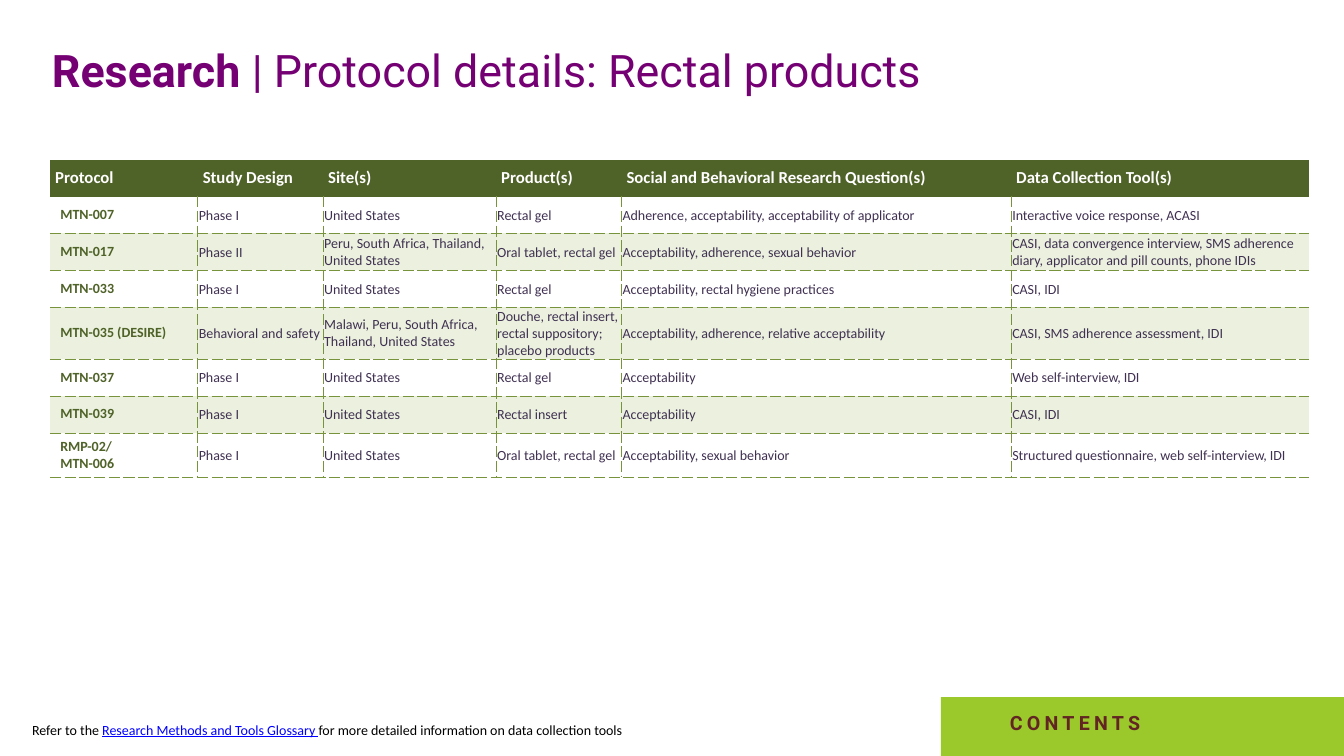
"""Build the slide listing protocol details for rectal products."""
from dataclasses import dataclass

from lxml import etree
from pptx import Presentation
from pptx.dml.color import RGBColor
from pptx.enum.shapes import MSO_SHAPE
from pptx.enum.text import MSO_ANCHOR
from pptx.oxml.ns import qn
from pptx.util import Cm, Pt

RECT = MSO_SHAPE.RECTANGLE
MIDDLE = MSO_ANCHOR.MIDDLE


@dataclass(frozen=True)
class Theme:
    heading: str = "Roboto"
    body: str = "Calibri"
    purple: str = "740074"
    dark_green: str = "4F6228"
    line_green: str = "77933C"
    pale_green: str = "EBF1DE"
    lime: str = "9BC82A"
    violet: str = "403152"
    maroon: str = "632523"
    blue: str = "0000FF"
    white: str = "FFFFFF"
    black: str = "000000"
    title_size: int = 32
    button_size: int = 14
    header_size: int = 12
    body_size: int = 10
    border_width: float = 0.25


theme = Theme()


def add_run(p, text, font, size, color, bold=False):
    r = p.add_run()
    r.text = text
    r.font.name = font
    r.font.size = Pt(size)
    r.font.bold = bold
    r.font.color.rgb = RGBColor.from_string(color)
    return r


def add_border(cell, side, color, dash):
    ln = etree.SubElement(cell._tc.get_or_add_tcPr(), qn(f"a:ln{side}"),
                          w=str(Pt(theme.border_width)))
    fill = etree.SubElement(ln, qn("a:solidFill"))
    etree.SubElement(fill, qn("a:srgbClr"), val=color)
    etree.SubElement(ln, qn("a:prstDash"), val=dash)


prs = Presentation()
prs.slide_width, prs.slide_height = Cm(33.87), Cm(19.05)
s = prs.slides.add_slide(prs.slide_layouts[6])

tf = s.shapes.add_textbox(Cm(1.06), Cm(0.42), Cm(32.4), Cm(2.68)).text_frame
tf.word_wrap = True
tf.vertical_anchor = MIDDLE
p = tf.paragraphs[0]
add_run(p, "Research ", theme.heading, theme.title_size, theme.purple, True)
add_run(p, "| Protocol details: Rectal products", theme.heading, theme.title_size, theme.purple)

protocols = [
    ("Protocol", "Study Design", "Site(s)", "Product(s)",
     "Social and Behavioral Research Question(s)", "Data Collection Tool(s)"),
    ("MTN-007", "Phase I", "United States", "Rectal gel",
     "Adherence, acceptability, acceptability of applicator", "Interactive voice response, ACASI"),
    ("MTN-017", "Phase II", "Peru, South Africa, Thailand, United States", "Oral tablet, rectal gel",
     "Acceptability, adherence, sexual behavior",
     "CASI, data convergence interview, SMS adherence diary, applicator and pill counts, phone IDIs"),
    ("MTN-033", "Phase I", "United States", "Rectal gel",
     "Acceptability, rectal hygiene practices", "CASI, IDI"),
    ("MTN-035 (DESIRE)", "Behavioral and safety", "Malawi, Peru, South Africa, Thailand, United States",
     "Douche, rectal insert, rectal suppository; placebo products",
     "Acceptability, adherence, relative acceptability", "CASI, SMS adherence assessment, IDI"),
    ("MTN-037", "Phase I", "United States", "Rectal gel", "Acceptability", "Web self-interview, IDI"),
    ("MTN-039", "Phase I", "United States", "Rectal insert", "Acceptability", "CASI, IDI"),
    ("RMP-02/\nMTN-006", "Phase I", "United States", "Oral tablet, rectal gel",
     "Acceptability, sexual behavior", "Structured questionnaire, web self-interview, IDI"),
]
col_widths = [3.72, 3.16, 4.36, 3.16, 9.82, 7.5]
row_height = 0.93

table = s.shapes.add_table(len(protocols), len(col_widths), Cm(1.26), Cm(4.02),
                           Cm(sum(col_widths)), Cm(row_height * len(protocols))).table
table.horz_banding = False
table._tbl.tblPr.find(qn("a:tableStyleId")).text = "{2D5ABB26-0587-4C30-8999-92F81FD0307C}"
for column, width in zip(table.columns, col_widths):
    column.width = Cm(width)

for i, protocol in enumerate(protocols):
    table.rows[i].height = Cm(row_height)
    for j, text in enumerate(protocol):
        cell = table.cell(i, j)
        cell.vertical_anchor = MIDDLE
        size, color, bold = theme.body_size, theme.violet, False
        if i == 0:
            size, color, bold = theme.header_size, theme.white, True
            insets = (0.13, 0.13, 0.13, 0.13)
            sides = "B"
        elif j == 0:
            color, bold = theme.dark_green, True
            insets = (0.26, 0.13, 0.25, 0.13)
            sides = "RTB"
        else:
            insets = (0.03, 0.03, 0.03, 0)
            sides = "LTB" if j == len(col_widths) - 1 else "LRTB"
        cell.margin_left, cell.margin_top, cell.margin_right, cell.margin_bottom = map(Cm, insets)

        for side in sides:
            if i == 0 or (i == 1 and side == "T"):
                add_border(cell, side, theme.dark_green, "solid")
            else:
                add_border(cell, side, theme.line_green, "sysDash")

        if i % 2:
            cell.fill.background()
        else:
            cell.fill.solid()
            band = theme.pale_green if i else theme.dark_green
            cell.fill.fore_color.rgb = RGBColor.from_string(band)

        p = cell.text_frame.paragraphs[0]
        for k, line in enumerate(text.split("\n")):
            if k:
                p.add_line_break()
            add_run(p, line, theme.body, size, color, bold)

sp = s.shapes.add_shape(RECT, Cm(23.71), Cm(17.57), Cm(10.16), Cm(8.51))
sp.shadow.inherit = False
sp.fill.solid()
sp.fill.fore_color.rgb = RGBColor.from_string(theme.lime)
sp.line.fill.background()

tf = s.shapes.add_textbox(Cm(25.2), Cm(17.8), Cm(6.99), Cm(0.86)).text_frame
tf.word_wrap = True
r = add_run(tf.paragraphs[0], "CONTENTS", theme.heading, theme.button_size, theme.maroon, True)
r._r.get_or_add_rPr().set("spc", "300")

tf = s.shapes.add_textbox(Cm(0.56), Cm(18.05), Cm(22.71), Cm(0.69)).text_frame
tf.word_wrap = True
p = tf.paragraphs[0]
add_run(p, "Refer to the ", theme.body, theme.body_size, theme.black)
r = add_run(p, "Research Methods and Tools Glossary ", theme.body, theme.body_size, theme.blue)
r.font.underline = True
add_run(p, "for more detailed information on data collection tools",
        theme.body, theme.body_size, theme.black)

prs.save("out.pptx")
